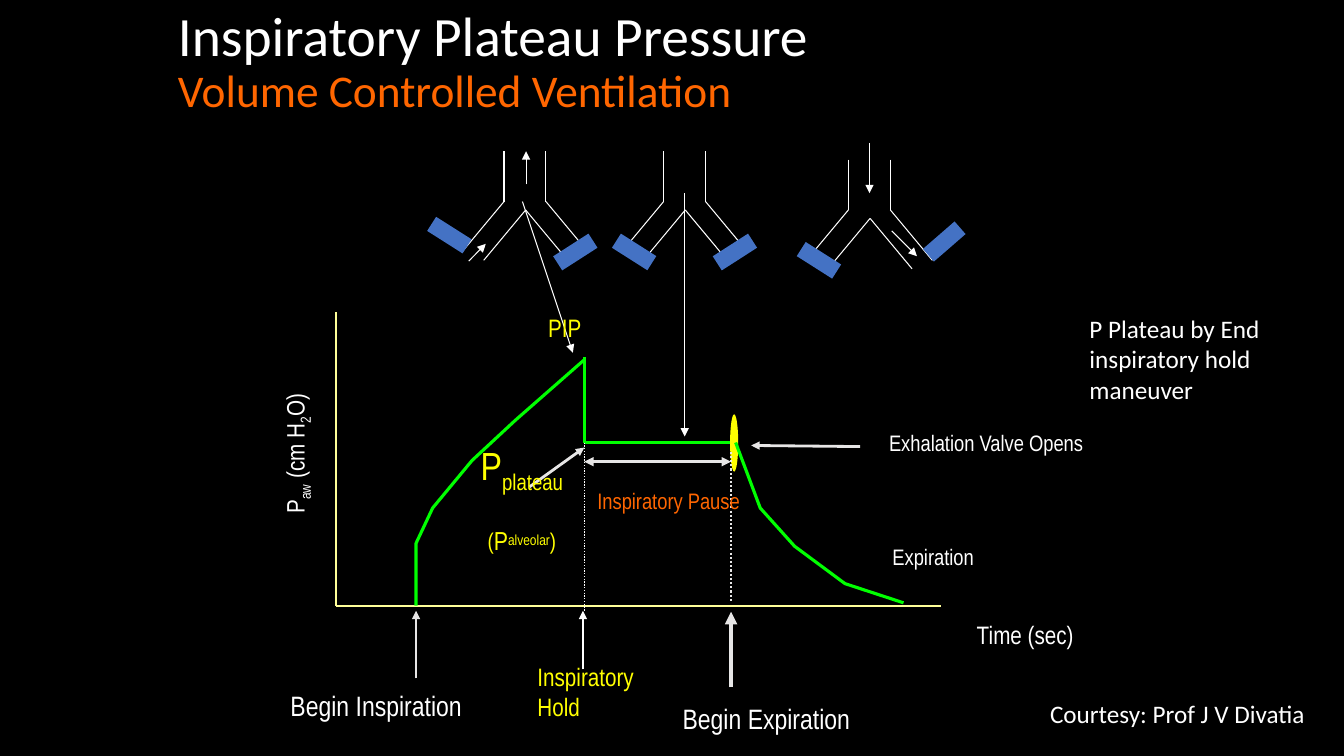
from lxml.etree import SubElement
from pptx import Presentation
from pptx.dml.color import RGBColor
from pptx.enum.dml import MSO_LINE
from pptx.enum.shapes import MSO_CONNECTOR, MSO_SHAPE
from pptx.enum.text import MSO_ANCHOR, MSO_AUTO_SIZE, PP_ALIGN
from pptx.oxml.ns import qn
from pptx.util import Pt

BLACK, WHITE, SILVER = "000000", "FFFFFF", "E7E6E6"
YELLOW, ORANGE, GREEN = "FFFF00", "FF6600", "00FF00"
AXIS, VALVE = "FFFF99", "4472C4"
NARROW, BODY = "Arial Narrow", "Calibri"
MIDDLE, TOP = MSO_ANCHOR.MIDDLE, MSO_ANCHOR.TOP
CENTER, LEFT = PP_ALIGN.CENTER, PP_ALIGN.LEFT
SUB = -25000


def rgb(value):
    return RGBColor.from_string(value)


def add_line(s, x1, y1, x2, y2, color=WHITE, width=0.75, ends=(), dash=None):
    sp = s.shapes.add_connector(MSO_CONNECTOR.STRAIGHT, Pt(x1), Pt(y1), Pt(x2), Pt(y2))
    sp.line.color.rgb = rgb(color)
    sp.line.width = Pt(width)
    if dash:
        sp.line.dash_style = dash
    ln = sp.line._get_or_add_ln()
    for end in ends:
        SubElement(ln, qn(f"a:{end}"), type="triangle")
    SubElement(sp._element.spPr, qn("a:effectLst"))


def add_curve(s, left, top, points):
    (x, y), *rest = [(Pt(left + dx), Pt(top + dy)) for dx, dy in points]
    builder = s.shapes.build_freeform(x, y)
    builder.add_line_segments(rest, close=False)
    sp = builder.convert_to_shape()
    sp.shadow.inherit = False
    sp.fill.background()
    sp.line.color.rgb = rgb(GREEN)
    sp.line.width = Pt(2.25)


def add_solid(s, kind, x, y, w, h, color, rotation=0):
    sp = s.shapes.add_shape(kind, Pt(x), Pt(y), Pt(w), Pt(h))
    sp.shadow.inherit = False
    sp.fill.solid()
    sp.fill.fore_color.rgb = rgb(color)
    sp.line.fill.background()
    sp.rotation = rotation


def add_text(s, x, y, w, h, paragraphs, size, color=WHITE, font=NARROW,
             align=CENTER, anchor=TOP, wrap=False, rotation=0):
    sp = s.shapes.add_textbox(Pt(x), Pt(y), Pt(w), Pt(h))
    sp.rotation = rotation
    tf = sp.text_frame
    tf.word_wrap = wrap
    tf.auto_size = MSO_AUTO_SIZE.SHAPE_TO_FIT_TEXT
    tf.vertical_anchor = anchor
    for i, runs in enumerate(paragraphs):
        p = tf.add_paragraph() if i else tf.paragraphs[0]
        p.alignment = align
        p.font.size = Pt(size)
        p.font.name = font
        p.font.color.rgb = rgb(color)
        for text, run_size, baseline in runs:
            r = p.add_run()
            r.text = text
            r.font.size = Pt(run_size or size)
            r.font.name = font
            r.font.color.rgb = rgb(color)
            if baseline:
                r._r.get_or_add_rPr().set("baseline", str(baseline))


def plain(*texts):
    return [[(text, None, 0)] for text in texts]


def add_title(s, x, y, w, h):
    tf = s.shapes.add_textbox(Pt(x), Pt(y), Pt(w), Pt(h)).text_frame
    tf.word_wrap = True
    tf.vertical_anchor = MIDDLE
    p = tf.paragraphs[0]
    p.line_spacing = 0.9
    p.font.name = BODY
    lines = [("Inspiratory Plateau Pressure", 39.6, WHITE),
             ("Volume Controlled Ventilation", 32.4, ORANGE)]
    for i, (text, size, color) in enumerate(lines):
        if i:
            p.add_line_break()
        r = p.add_run()
        r.text = text
        r.font.size = Pt(size)
        r.font.color.rgb = rgb(color)
        r.font.name = BODY
        effects = SubElement(r._r.rPr, qn("a:effectLst"))
        r._r.rPr.find(qn("a:solidFill")).addnext(effects)
        shadow = SubElement(effects, qn("a:outerShdw"), dist="35921", dir="2700000")
        SubElement(shadow, qn("a:srgbClr"), val="808080")


def add_airway(s, x, y, valves, flows=()):
    branches = [(0, 0, 0, 36), (30, 0, 30, 36), (0, 36, -30, 72), (30, 36, 60, 72),
                (15.5, 42, -14.5, 78), (15.5, 42, 45.5, 78)]
    for x1, y1, x2, y2 in branches:
        add_line(s, x + x1, y + y1, x + x2, y + y2)
    for dx, dy, rotation in valves:
        add_solid(s, MSO_SHAPE.RECTANGLE, x + dx, y + dy, 30, 12, VALVE, rotation)
    for x1, y1, x2, y2 in flows:
        add_line(s, x + x1, y + y1, x + x2, y + y2, ends=["tailEnd"])


def add_pressure_curve(s, x, y, w, h):
    add_line(s, x, y, x, y + h, AXIS, 1.5)
    add_line(s, x, y + h, x + w, y + h, AXIS, 1.5)

    begin, hold, release, plateau = 57.2, 177.4, 282.2, 92.9
    add_curve(s, x, y, [(begin, h), (begin, 164.9), (69.1, 139.7), (97.2, 105.8),
                        (128.2, 77), (hold, 33.8)])
    add_curve(s, x, y, [(hold, 31.7), (hold, plateau), (285.5, plateau)])
    add_solid(s, MSO_SHAPE.OVAL, x + 281.5, y + 72.7, 5.8, 41, YELLOW)
    add_curve(s, x, y, [(285.5, plateau), (303.1, 139.7), (327.6, 167),
                        (363.6, 193.7), (405.4, 207.4)])

    dots = MSO_LINE.ROUND_DOT
    arrow, both = ["tailEnd"], ["headEnd", "tailEnd"]
    marks = [
        (begin, 261.4, begin, 213.1, SILVER, 2, arrow, None),
        (138.2, 124.6, hold, 96.5, SILVER, 2, arrow, None),
        (hold, 106.6, release, 106.6, SILVER, 2.25, both, None),
        (hold, plateau, hold, 213.1, WHITE, 1, (), dots),
        (release, 99.4, release, 207.4, SILVER, 1.5, (), dots),
        (374.4, 95.8, 296.6, 95, SILVER, 2, arrow, None),
        (release, 267.8, release, 213.8, SILVER, 3, arrow, None),
        (176.4, 254.9, 176.4, 213.1, WHITE, 1, arrow, None),
        (133.2, -79.2, 169.2, 28.8, WHITE, 0.75, arrow, None),
        (249.1, -85, 249.1, 88.6, WHITE, 0.75, arrow, None),
    ]
    for x1, y1, x2, y2, *style in marks:
        add_line(s, x + x1, y + y1, x + x2, y + y2, *style)

    pressure = [[("P", None, 0), ("aw", None, SUB), (" (cm H", None, 0),
                 ("2", None, SUB), ("O)", None, 0)]]
    add_text(s, x - 137.5, y + 86.4, 216, 28.8, pressure, 18, wrap=True, rotation=270)
    add_text(s, x + 408.2, y + 215.3, 168, 28.8, plain("Time (sec)"), 18, wrap=True)
    alveolar = [[("P", None, 0), ("plateau", None, SUB)],
                [("(", None, SUB), ("P", 32, SUB), ("alveolar", 18, SUB), (")", None, SUB)]]
    add_text(s, x + 84.2, y + 95.8, 97.2, 74.2, alveolar, 28, YELLOW,
             anchor=MIDDLE, wrap=True)
    labels = [
        (-39.6, 265, 138.2, 31.7, ["Begin Inspiration"], 20, WHITE, LEFT, TOP),
        (240.5, 274.3, 135.4, 31.7, ["Begin Expiration"], 20, WHITE, LEFT, TOP),
        (136.8, 245.5, 84.2, 51.1, ["Inspiratory", "Hold"], 18, YELLOW, LEFT, TOP),
        (144, -3.6, 38.9, 28.8, ["PIP"], 18, YELLOW, CENTER, MIDDLE),
        (179.3, 121, 116.6, 26.6, ["Inspiratory Pause"], 16, ORANGE, CENTER, TOP),
        (387.4, 79.9, 154.1, 26.6, ["Exhalation Valve Opens"], 16, WHITE, CENTER, MIDDLE),
        (390.2, 161.3, 72.7, 26.6, ["Expiration"], 16, WHITE, CENTER, MIDDLE),
    ]
    for dx, dy, lw, lh, lines, size, color, align, anchor in labels:
        add_text(s, x + dx, y + dy, lw, lh, plain(*lines), size, color,
                 align=align, anchor=anchor)


def add_note(s, x, y, w, h, text):
    add_text(s, x, y, w, h, plain(text), 18, font=BODY, align=LEFT, wrap=True)


def main():
    prs = Presentation()
    prs.slide_width, prs.slide_height = Pt(960), Pt(540)
    s = prs.slides.add_slide(prs.slide_layouts[6])
    s.background.fill.solid()
    s.background.fill.fore_color.rgb = rgb(BLACK)

    add_title(s, 120, 0, 666, 90)
    add_pressure_curve(s, 240, 223.2, 432, 209.5)
    closed_left, closed_right = (-36, 66, 32.4), (36, 66, 327.3)
    add_airway(s, 360, 108, [(-54, 54, 32.4), closed_right],
               [(-25.2, 78.5, -13, 66.2), (15.8, 23.8, 15.8, 0)])
    add_airway(s, 474, 108, [closed_left, closed_right])
    add_airway(s, 606, 114, [closed_left, (53.5, 52.5, 319)],
               [(15.1, -12, 15.1, 24), (31, 51, 49, 69)])
    add_note(s, 743, 495.4, 201.6, 28.8, "Courtesy: Prof J V Divatia")
    add_note(s, 771.1, 220.3, 156.2, 72.7, "P Plateau by End inspiratory hold maneuver")
    prs.save("out.pptx")


if __name__ == "__main__":
    main()
